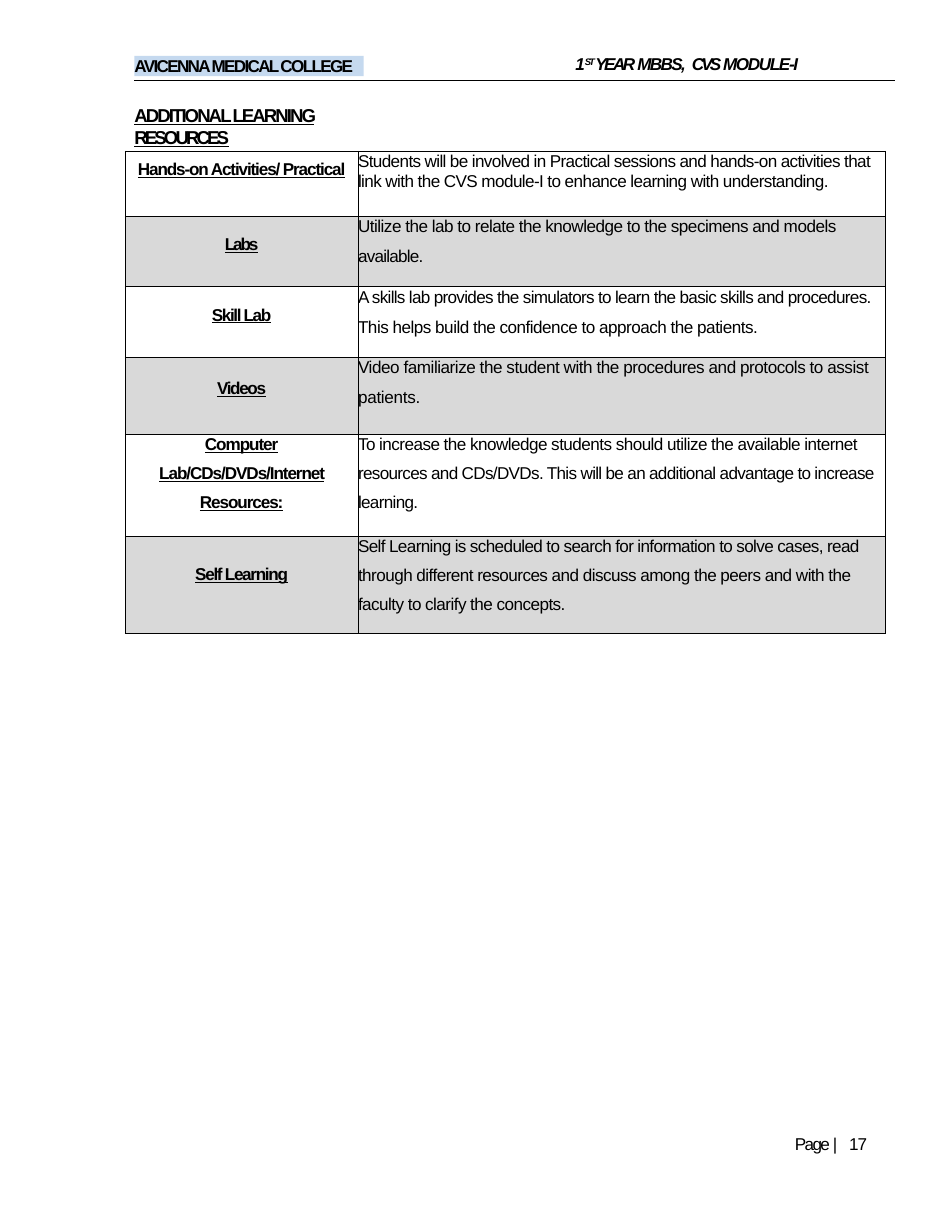
from lxml import etree
from pptx import Presentation
from pptx.dml.color import RGBColor
from pptx.enum import shapes, text
from pptx.oxml import ns
from pptx.util import Cm, Pt

BLACK = RGBColor(0, 0, 0)
WHITE = RGBColor(0xFF, 0xFF, 0xFF)
GREY = RGBColor(0xD9, 0xD9, 0xD9)
PALE_BLUE = RGBColor(0xC5, 0xD9, 0xEF)
CENTER, LEFT = text.PP_ALIGN.CENTER, text.PP_ALIGN.LEFT

# Label, padding above it, letter spacing, row height,
# then (text, letter spacing, line spacing, space before) per paragraph
RESOURCES = [
    ("Hands-on Activities/ Practical", 0.2, -0.75, 1.47, [
        ("Students will be involved in Practical sessions and hands-on "
         "activities that", -0.42, Pt(12.9), 0),
        ("link with the CVS module-I to enhance learning with "
         "understanding.", -0.41, 1.0, 0.2)]),
    ("Labs", 0.43, -1.4, 1.6, [
        ("Utilize the lab to relate the knowledge to the specimens and "
         "models", -0.34, Pt(12.9), 0),
        ("available.", -0.5, 1.0, 7)]),
    ("Skill Lab", 0.43, -0.9, 1.6, [
        ("A skills lab provides the simulators to learn the basic skills "
         "and procedures.", -0.45, Pt(12.9), 0),
        ("This helps build the confidence to approach the patients.",
         -0.34, 1.0, 7)]),
    ("Videos", 0.5, -0.9, 1.74, [
        ("Video familiarize the student with the procedures and protocols "
         "to assist", -0.31, Pt(12.9), 0),
        ("patients.", -0.2, 1.0, 7)]),
    ("Computer Lab/CDs/DVDs/Internet Resources:", 0, -0.7, 2.32, [
        ("To increase the knowledge students should utilize the available "
         "internet", -0.37, Pt(12.9), 0),
        ("resources and CDs/DVDs. This will be an additional advantage to "
         "increase learning.", -0.44, 1.52, 0.1)]),
    ("Self Learning", 0.65, -0.85, 2.21, [
        ("Self Learning is scheduled to search for information to solve "
         "cases, read", -0.43, Pt(12.9), 0),
        ("through different resources and discuss among the peers and with "
         "the faculty to clarify the concepts.", -0.37, 1.53, 0)]),
]


def write(paragraph, runs, size=11, bold=False, italic=False,
          underline=False, align=LEFT, line_spacing=1.0):
    """Fill a paragraph with (text, letter spacing) runs."""
    paragraph.alignment = align
    paragraph.line_spacing = line_spacing
    font = paragraph.font
    font.name, font.size, font.color.rgb = "Arial", Pt(size), BLACK
    font.bold, font.italic, font.underline = bold, italic, underline
    for words, spacing in runs:
        run = paragraph.add_run()
        run.text = words
        run._r.get_or_add_rPr().set("spc", str(round(spacing * 100)))


def prepare_frame(shape):
    frame = shape.text_frame
    frame.word_wrap = True
    frame.auto_size = text.MSO_AUTO_SIZE.NONE
    frame.vertical_anchor = text.MSO_ANCHOR.TOP
    frame.margin_left = frame.margin_right = 0
    frame.margin_top = frame.margin_bottom = 0
    return frame.paragraphs[0]


def add_page_header(slide, left, top, width):
    # College name on a tinted band
    band = slide.shapes.add_shape(shapes.MSO_SHAPE.RECTANGLE, Cm(left),
                                  Cm(top + 0.08), Cm(5.2), Cm(0.46))
    band.shadow.inherit = False
    band.fill.solid()
    band.fill.fore_color.rgb = PALE_BLUE
    band.line.fill.background()
    write(prepare_frame(band), [("AVICENNA MEDICAL COLLEGE", -1.1)],
          bold=True, line_spacing=Pt(12.9))

    # Module name
    module = slide.shapes.add_textbox(Cm(left + 10), Cm(top + 0.02),
                                      Cm(7.04), Cm(0.5))
    paragraph = prepare_frame(module)
    write(paragraph, [("1", -0.9), ("ST ", -1.4), ("YEAR ", -1.7),
                      ("MBBS,  ", -1.1), ("CVS ", -1.9), ("MODULE-I", -0.9)],
          bold=True, italic=True)
    ordinal = paragraph.runs[1]
    ordinal.font.size = Pt(10.5)
    ordinal._r.get_or_add_rPr().set("baseline", "32000")

    # Rule under the header
    rule = slide.shapes.add_connector(
        shapes.MSO_CONNECTOR.STRAIGHT, Cm(left), Cm(top + 0.64),
        Cm(left + width), Cm(top + 0.64))
    rule.line.color.rgb = BLACK
    rule.line.width = Pt(0.75)
    etree.SubElement(rule._element.spPr, ns.qn("a:effectLst"))


def add_heading(slide, left, top, width, height):
    title = slide.shapes.title
    title.left, title.top = Cm(left), Cm(top)
    title.width, title.height = Cm(width), Cm(height)
    write(prepare_frame(title),
          [("ADDITIONAL LEARNING ", -1.27), ("RESOURCES", -1.9)],
          size=12, bold=True, underline=True)


def format_cell(cell, fill, top_margin):
    cell.fill.solid()
    cell.fill.fore_color.rgb = fill
    cell.margin_left = cell.margin_right = cell.margin_bottom = 0
    cell.margin_top = Cm(top_margin)
    properties = cell._tc.get_or_add_tcPr()
    for index, side in enumerate(("lnL", "lnR", "lnT", "lnB")):
        border = etree.Element(ns.qn("a:" + side), w=str(Pt(0.5)))
        solid = etree.SubElement(border, ns.qn("a:solidFill"))
        etree.SubElement(solid, ns.qn("a:srgbClr"), val=str(BLACK))
        properties.insert(index, border)


def add_resource_table(slide, left, top, label_width, text_width):
    height = sum(resource[3] for resource in RESOURCES)
    table = slide.shapes.add_table(
        len(RESOURCES), 2, Cm(left), Cm(top),
        Cm(label_width + text_width), Cm(height)).table
    table.first_row = table.horz_banding = False
    table.columns[0].width = Cm(label_width)
    table.columns[1].width = Cm(text_width)

    for index, (label, padding, spacing, row_height, lines) in enumerate(RESOURCES):
        table.rows[index].height = Cm(row_height)
        fill = GREY if index % 2 else WHITE
        label_cell, text_cell = table.cell(index, 0), table.cell(index, 1)

        # Underlined label; the long one opens up its lines
        format_cell(label_cell, fill, padding)
        paragraph = label_cell.text_frame.paragraphs[0]
        first, _, rest = label.partition(" ")
        style = dict(bold=True, underline=True, align=CENTER)
        if first == "Computer":
            write(paragraph, [(first, spacing)], line_spacing=Pt(12.9), **style)
            paragraph = label_cell.text_frame.add_paragraph()
            write(paragraph, [(rest, spacing)], line_spacing=1.52, **style)
        else:
            write(paragraph, [(label, spacing)], **style)

        # Description
        format_cell(text_cell, fill, 0)
        frame = text_cell.text_frame
        for number, (words, letter_gap, line_spacing, before) in enumerate(lines):
            paragraph = frame.add_paragraph() if number else frame.paragraphs[0]
            write(paragraph, [(words, letter_gap)], line_spacing=line_spacing)
            if before:
                paragraph.space_before = Pt(before)


def add_page_number(slide, left, top, width, height):
    box = slide.shapes.add_textbox(Cm(left), Cm(top), Cm(width), Cm(height))
    write(prepare_frame(box), [("Page ", -1.1), ("| ", 2.2), ("17", -0.6)],
          line_spacing=Pt(11.5))


def main():
    presentation = Presentation()
    presentation.slide_width, presentation.slide_height = Cm(21.59), Cm(27.94)
    slide = presentation.slides.add_slide(presentation.slide_layouts[5])
    add_page_header(slide, 3.05, 1.19, 17.25)
    add_heading(slide, 3.05, 2.35, 5.9, 0.6)
    add_resource_table(slide, 2.84, 3.43, 5.28, 11.96)
    add_page_number(slide, 18.03, 25.76, 1.8, 0.46)
    presentation.save("out.pptx")


if __name__ == "__main__":
    main()
